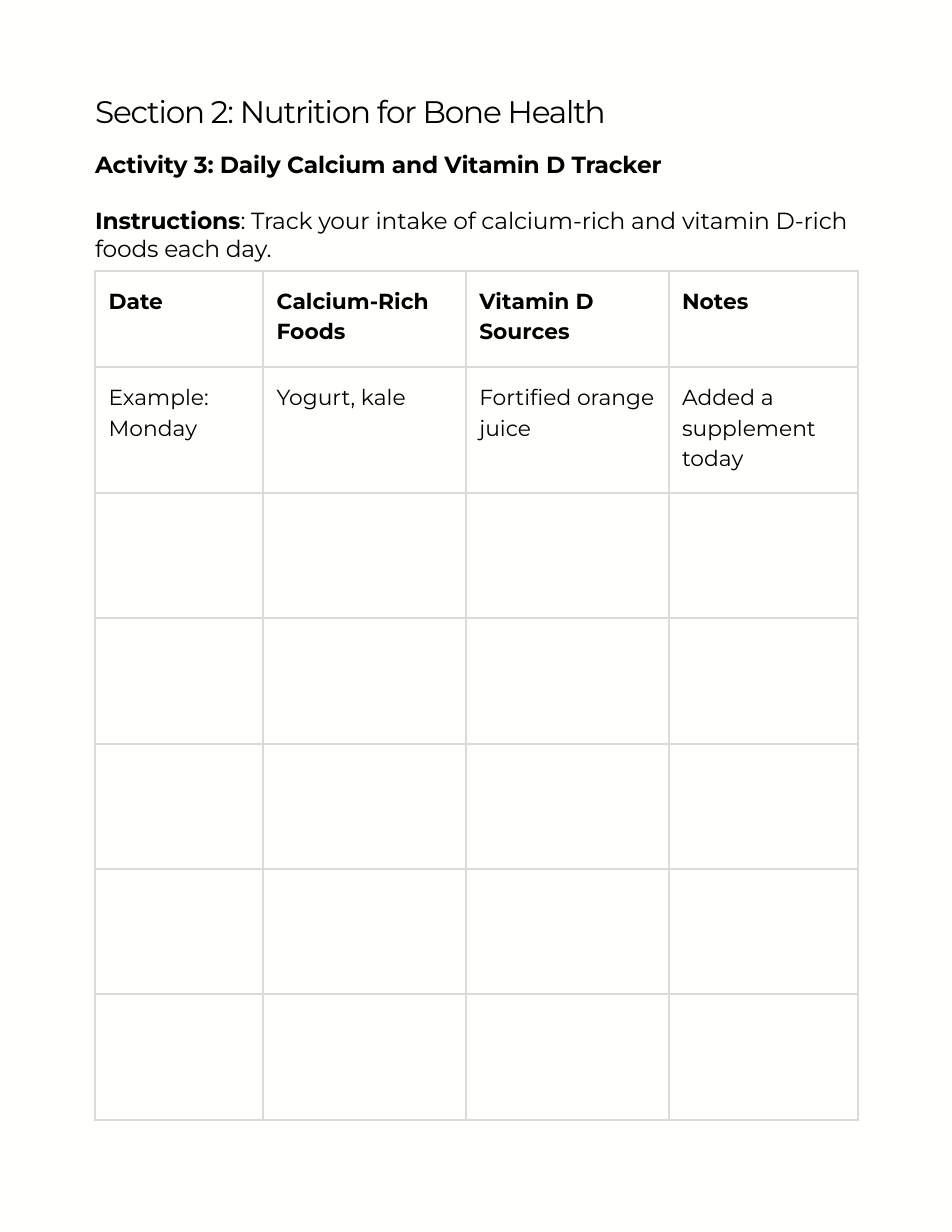
"""Build a one-page daily calcium and vitamin D tracker."""
from lxml.etree import SubElement
from pptx import Presentation
from pptx.dml.color import RGBColor
from pptx.oxml.ns import qn
from pptx.util import Inches, Pt

BACKGROUND = RGBColor(0xFF, 0xFF, 0xFC)
BLACK = RGBColor(0, 0, 0)
BORDER = RGBColor(0xDB, 0xDB, 0xDB)
FONT = "Montserrat"
LEFT, WIDTH = 0.85, 6.8
COLUMNS = [1.5, 1.81, 1.81, 1.69]
ROWS = [0.86] + [1.12] * 6
ENTRIES = [
    ["Date", "Calcium-Rich Foods", "Vitamin D Sources", "Notes"],
    ["Example: Monday", "Yogurt, kale", "Fortified orange juice", "Added a supplement today"],
]


def write(p, text, size=15, bold=False, leading=18, spacing=0):
    p.line_spacing = Pt(leading)
    r = p.add_run()
    r.text = text
    r.font.name = FONT
    r.font.size = Pt(size)
    r.font.bold = bold
    r.font.color.rgb = BLACK
    if spacing:
        r.font._element.set("spc", str(round(spacing * 100)))


def add_text_frame(s, top, height):
    sp = s.shapes.add_textbox(Inches(LEFT), Inches(top), Inches(WIDTH), Inches(height))
    tf = sp.text_frame
    tf.word_wrap = True
    tf.margin_left = tf.margin_top = tf.margin_right = tf.margin_bottom = 0
    return tf


def set_borders(cell):
    tc_pr = cell._tc.get_or_add_tcPr()
    for side in ("a:lnL", "a:lnR", "a:lnT", "a:lnB"):
        line = SubElement(tc_pr, qn(side), w=str(Pt(1.5)))
        fill = SubElement(line, qn("a:solidFill"))
        SubElement(fill, qn("a:srgbClr"), val=str(BORDER))


def add_tracker(s, top):
    table = s.shapes.add_table(
        len(ROWS), len(COLUMNS), Inches(LEFT), Inches(top), Inches(WIDTH), Inches(sum(ROWS))
    ).table
    table.horz_banding = False
    table.first_row = False
    for column, width in zip(table.columns, COLUMNS):
        column.width = Inches(width)
    for row, height in zip(table.rows, ROWS):
        row.height = Inches(height)
    for cell in table.iter_cells():
        cell.margin_left = cell.margin_right = Inches(0.12)
        cell.margin_top = cell.margin_bottom = Inches(0.12)
        set_borders(cell)
        cell.fill.background()
    for i, texts in enumerate(ENTRIES):
        for j, text in enumerate(texts):
            p = table.cell(i, j).text_frame.paragraphs[0]
            write(p, text, size=14, bold=i == 0, leading=19.6)


def main():
    prs = Presentation()
    prs.slide_width, prs.slide_height = Inches(8.5), Inches(11)
    s = prs.slides.add_slide(prs.slide_layouts[6])
    s.background.fill.solid()
    s.background.fill.fore_color.rgb = BACKGROUND

    heading = add_text_frame(s, 0.91, 0.27)
    write(heading.paragraphs[0], "Section 2: Nutrition for Bone Health", size=20, spacing=-0.8)

    intro = add_text_frame(s, 1.34, 0.93)
    write(intro.paragraphs[0], "Activity 3: Daily Calcium and Vitamin D Tracker",
          bold=True, spacing=-0.1)
    p = intro.add_paragraph()
    p.space_before = Pt(18)
    write(p, "Instructions", bold=True, spacing=-0.1)
    write(p, ": Track your intake of calcium-rich and vitamin D-rich foods each day.",
          spacing=-0.1)

    add_tracker(s, 2.42)
    prs.save("out.pptx")


if __name__ == "__main__":
    main()
